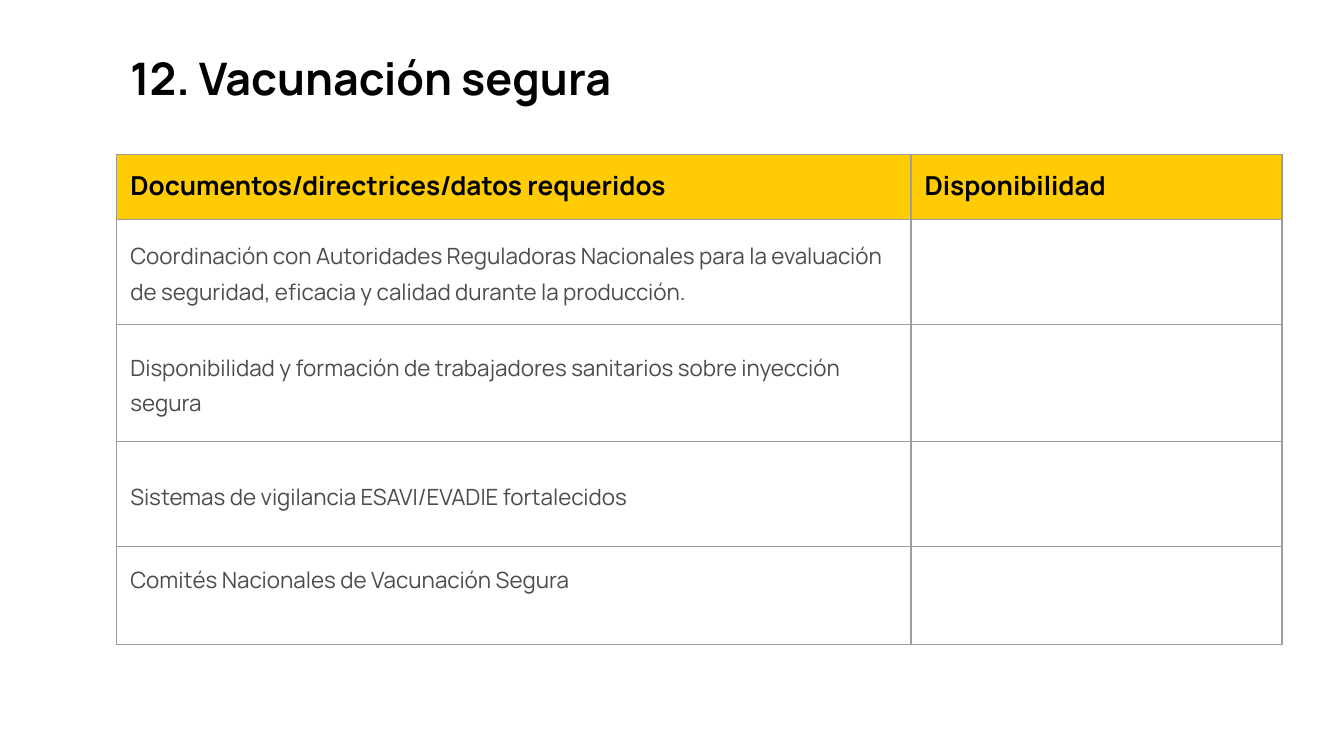
from lxml.etree import SubElement
from pptx import Presentation
from pptx.dml.color import RGBColor
from pptx.enum.text import MSO_ANCHOR
from pptx.oxml.ns import qn
from pptx.util import Pt

INSET = 7.2
LEFT = 62.6
COLS = [425.5, 198.7]
ROWS = [34.8, 56.3, 63, 56.3, 52.2]
HEADS = ["Documentos/directrices/datos requeridos", "Disponibilidad"]
ITEMS = [
    "Coordinación con Autoridades Reguladoras Nacionales para la evaluación "
    "de seguridad, eficacia y calidad durante la producción.",
    "Disponibilidad y formación de trabajadores sanitarios sobre inyección segura",
    "Sistemas de vigilancia ESAVI/EVADIE fortalecidos",
    "Comités Nacionales de Vacunación Segura",
]


def color(code):
    return RGBColor.from_string(code)


def pad(box):
    """Give a text frame or a cell the same inset on all sides."""
    box.margin_left = box.margin_right = Pt(INSET)
    box.margin_top = box.margin_bottom = Pt(INSET)


def write(frame, text, size, code="000000", bold=False, space=None):
    par = frame.paragraphs[0]
    par.line_spacing = space
    run = par.add_run()
    run.text = text
    run.font.name = "Manrope"
    run.font.size = Pt(size)
    run.font.bold = bold
    run.font.color.rgb = color(code)


def border(cell, code, width):
    props = cell._tc.get_or_add_tcPr()
    for side in ("lnL", "lnR", "lnT", "lnB"):
        line = SubElement(props, qn(f"a:{side}"), w=str(Pt(width)))
        fill = SubElement(line, qn("a:solidFill"))
        SubElement(fill, qn("a:srgbClr"), val=code)


def add_title(slide, text):
    box = slide.shapes.add_textbox(Pt(LEFT), Pt(20.2), Pt(657.4), Pt(42.5))
    frame = box.text_frame
    frame.word_wrap = True
    pad(frame)
    write(frame, text, 24, bold=True)


def add_grid(slide):
    table = slide.shapes.add_table(
        len(ROWS), len(COLS), Pt(LEFT), Pt(82.6), Pt(sum(COLS)), Pt(sum(ROWS))
    ).table
    table.first_row = table.horz_banding = False
    for col, width in zip(table.columns, COLS):
        col.width = Pt(width)
    for row, height in zip(table.rows, ROWS):
        row.height = Pt(height)
    for cell in table.iter_cells():
        pad(cell)
        border(cell, "9E9E9E", 0.75)
        cell.fill.background()
    for col, text in enumerate(HEADS):
        cell = table.cell(0, col)
        cell.fill.solid()
        cell.fill.fore_color.rgb = color("FFCB03")
        write(cell.text_frame, text, 14, bold=True)
    for row, text in enumerate(ITEMS, 1):
        cell = table.cell(row, 0)
        last = row == len(ITEMS)
        cell.vertical_anchor = MSO_ANCHOR.TOP if last else MSO_ANCHOR.MIDDLE
        write(cell.text_frame, text, 12, "4C4C4C", space=1.15)


def main():
    deck = Presentation()
    deck.slide_width, deck.slide_height = Pt(720), Pt(405)
    slide = deck.slides.add_slide(deck.slide_layouts[6])
    add_title(slide, "12. Vacunación segura")
    add_grid(slide)
    deck.save("out.pptx")


if __name__ == "__main__":
    main()
